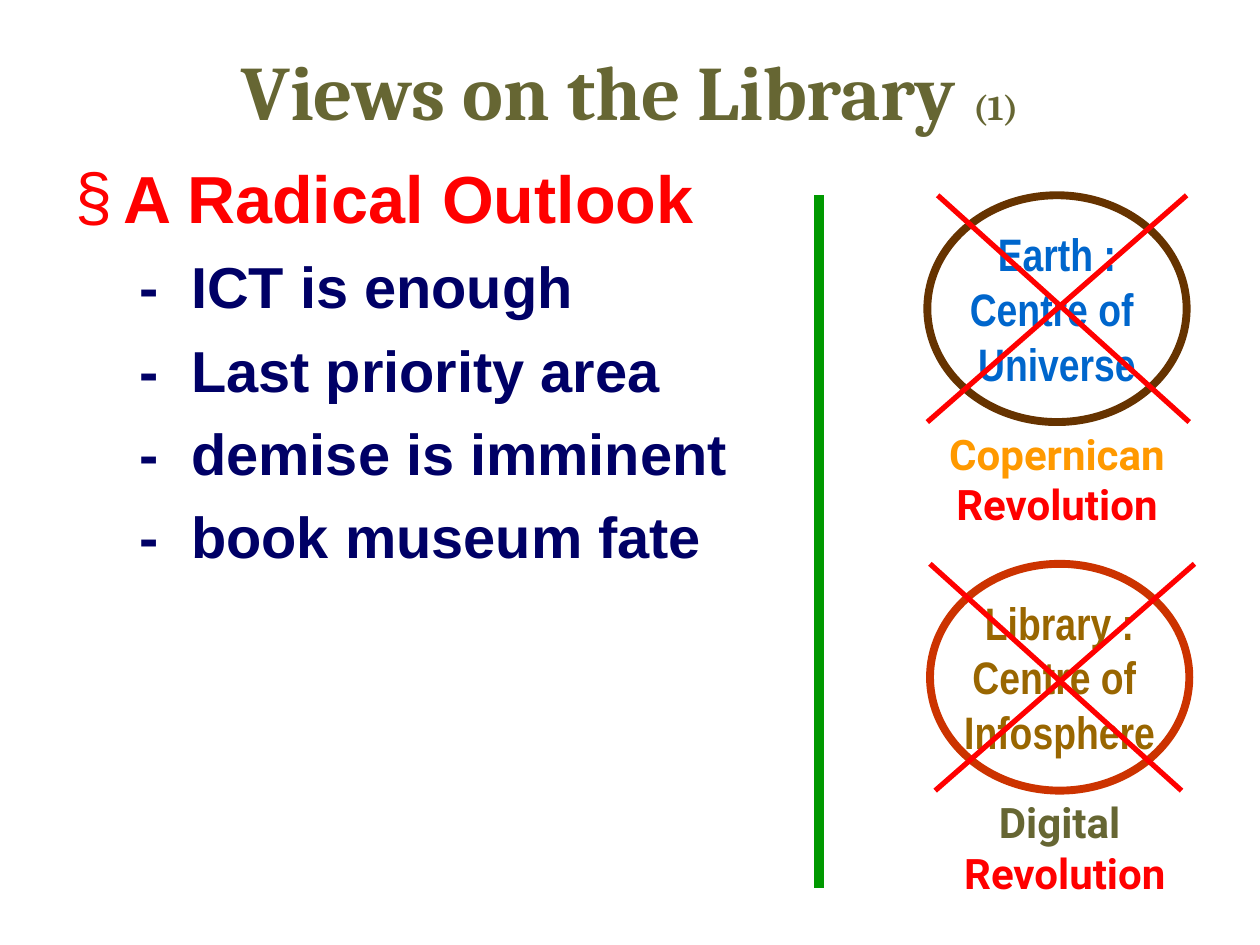
from dataclasses import dataclass

from lxml import etree
from pptx import Presentation
from pptx import util as u
from pptx.dml.color import RGBColor
from pptx.enum import shapes, text
from pptx.oxml.ns import qn


@dataclass(frozen=True)
class Theme:
    olive: str = "666633"
    red: str = "FF0000"
    navy: str = "000066"
    green: str = "009900"
    orange: str = "FF9900"
    brown: str = "663300"
    rust: str = "CC3300"
    blue: str = "0066CC"
    ochre: str = "996600"
    title_size: int = 44
    number_size: int = 20
    heading_size: int = 38
    item_size: int = 33
    circle_size: int = 26
    caption_size: int = 24
    title_font: str = "Cambria"
    body_font: str = "Arial"
    circle_font: str = "Arial Narrow"
    caption_font: str = "Roboto"


THEME = Theme()


@dataclass(frozen=True)
class Box:
    left: float
    top: float
    width: float
    height: float

    def inner(self, left, top, width, height):
        """A box inside this one, given as shares of its size."""
        return Box(*self.point(left, top), self.width * width, self.height * height)

    def point(self, across, down):
        return self.left + across * self.width, self.top + down * self.height

    def lengths(self):
        return [u.Inches(n) for n in (self.left, self.top, self.width, self.height)]


@dataclass(frozen=True)
class Panel:
    circle_lines: tuple
    circle_color: str
    text_color: str
    caption: tuple
    caption_color: str
    falling: tuple  # left and right end of each cross stroke, as shares of the circle
    rising: tuple


PANELS = (
    Panel(("Earth :", "Centre of ", "Universe"), THEME.brown, THEME.blue,
          ("Copernican ", "Revolution "), THEME.orange, (0.04, 1.01), (0, 1)),
    Panel(("Library :", "Centre of ", "Infosphere"), THEME.rust, THEME.ochre,
          ("Digital ", "Revolution"), THEME.olive, (0, 0.97), (0.02, 1.02)),
)


def add_run(paragraph, words, font, size, color):
    run = paragraph.add_run()
    run.text = words
    run.font.name = font
    run.font.size = u.Pt(size)
    run.font.bold = True
    run.font.color.rgb = RGBColor.from_string(color)


def set_indent(paragraph, hanging, left):
    properties = paragraph._p.get_or_add_pPr()
    properties.set("marL", str(u.Inches(left)))
    properties.set("indent", str(-u.Inches(hanging)))
    return properties


def add_text_frame(slide, box, wrap=True):
    frame = slide.shapes.add_textbox(*box.lengths()).text_frame
    frame.word_wrap = wrap
    return frame


def add_centred_lines(slide, box, lines, font, size, colors, wrap=True):
    frame = add_text_frame(slide, box, wrap)
    for index, (line, color) in enumerate(zip(lines, colors)):
        paragraph = frame.add_paragraph() if index else frame.paragraphs[0]
        paragraph.alignment = text.PP_ALIGN.CENTER
        add_run(paragraph, line, font, size, color)


def add_line(slide, start, end, color, width):
    line = slide.shapes.add_connector(
        shapes.MSO_CONNECTOR.STRAIGHT, *[u.Inches(n) for n in (*start, *end)])
    line.line.color.rgb = RGBColor.from_string(color)
    line.line.width = u.Pt(width)
    etree.SubElement(line._element.spPr, qn("a:effectLst"))


def place_title(slide, box):
    title = slide.shapes.title
    title.left, title.top, title.width, title.height = box.lengths()
    title.text_frame.vertical_anchor = text.MSO_ANCHOR.MIDDLE
    paragraph = title.text_frame.paragraphs[0]
    paragraph.alignment = text.PP_ALIGN.CENTER
    for words, size in (("Views on the Library ", THEME.title_size),
                        ("(1)", THEME.number_size)):
        add_run(paragraph, words, THEME.title_font, size, THEME.olive)


def place_outlook(slide, box):
    frame = add_text_frame(slide, box)
    heading = frame.paragraphs[0]
    heading.space_before = u.Pt(8)
    properties = set_indent(heading, 0.38, 0.38)
    etree.SubElement(properties, qn("a:buFont"), typeface=THEME.body_font)
    etree.SubElement(properties, qn("a:buChar"), char="§")
    add_run(heading, "A Radical Outlook", THEME.body_font, THEME.heading_size, THEME.red)
    for item in ("ICT is enough", "Last priority area",
                 "demise is imminent", "book museum fate"):
        paragraph = frame.add_paragraph()
        paragraph.space_before = u.Pt(8)
        set_indent(paragraph, 0.41, 0.92)
        add_run(paragraph, "-\t" + item, THEME.body_font, THEME.item_size, THEME.navy)


def place_panel(slide, box, panel):
    """A crossed-out circle over the top two thirds, its caption below."""
    circle = box.inner(0, 0, 1, 2 / 3)
    ellipse = slide.shapes.add_shape(shapes.MSO_SHAPE.OVAL, *circle.lengths())
    ellipse.shadow.inherit = False
    ellipse.fill.background()
    ellipse.line.color.rgb = RGBColor.from_string(panel.circle_color)
    ellipse.line.width = u.Pt(4.5)
    add_centred_lines(slide, circle.inner(0.05, 0.11, 0.9, 0.78), panel.circle_lines,
                      THEME.circle_font, THEME.circle_size, [panel.text_color] * 3)
    add_centred_lines(slide, box.inner(0.02, 2 / 3, 1, 1 / 3), panel.caption,
                      THEME.caption_font, THEME.caption_size,
                      (panel.caption_color, THEME.red), wrap=False)
    for (left, right), start, end in ((panel.falling, 0, 1), (panel.rising, 1, 0)):
        add_line(slide, circle.point(left, start), circle.point(right, end), THEME.red, 3)


def main():
    presentation = Presentation()
    page = Box(0, 0, 10, 7.5)
    presentation.slide_width = u.Inches(page.width)
    presentation.slide_height = u.Inches(page.height)
    slide = presentation.slides.add_slide(presentation.slide_layouts[5])

    place_title(slide, page.inner(0.05, 0.03, 0.9, 0.13))
    place_outlook(slide, page.inner(0.05, 0.16, 0.92, 0.47))
    content_top = 1.55 / page.height
    add_line(slide, page.point(0.65, content_top), page.point(0.65, 0.94), THEME.green, 6)
    column = page.inner(7.36 / page.width, content_top, 0.21, 0.75)
    for row, panel in enumerate(PANELS):
        place_panel(slide, column.inner(0.01 * row, 0.52 * row, 0.98, 0.48), panel)

    presentation.save("out.pptx")


if __name__ == "__main__":
    main()
